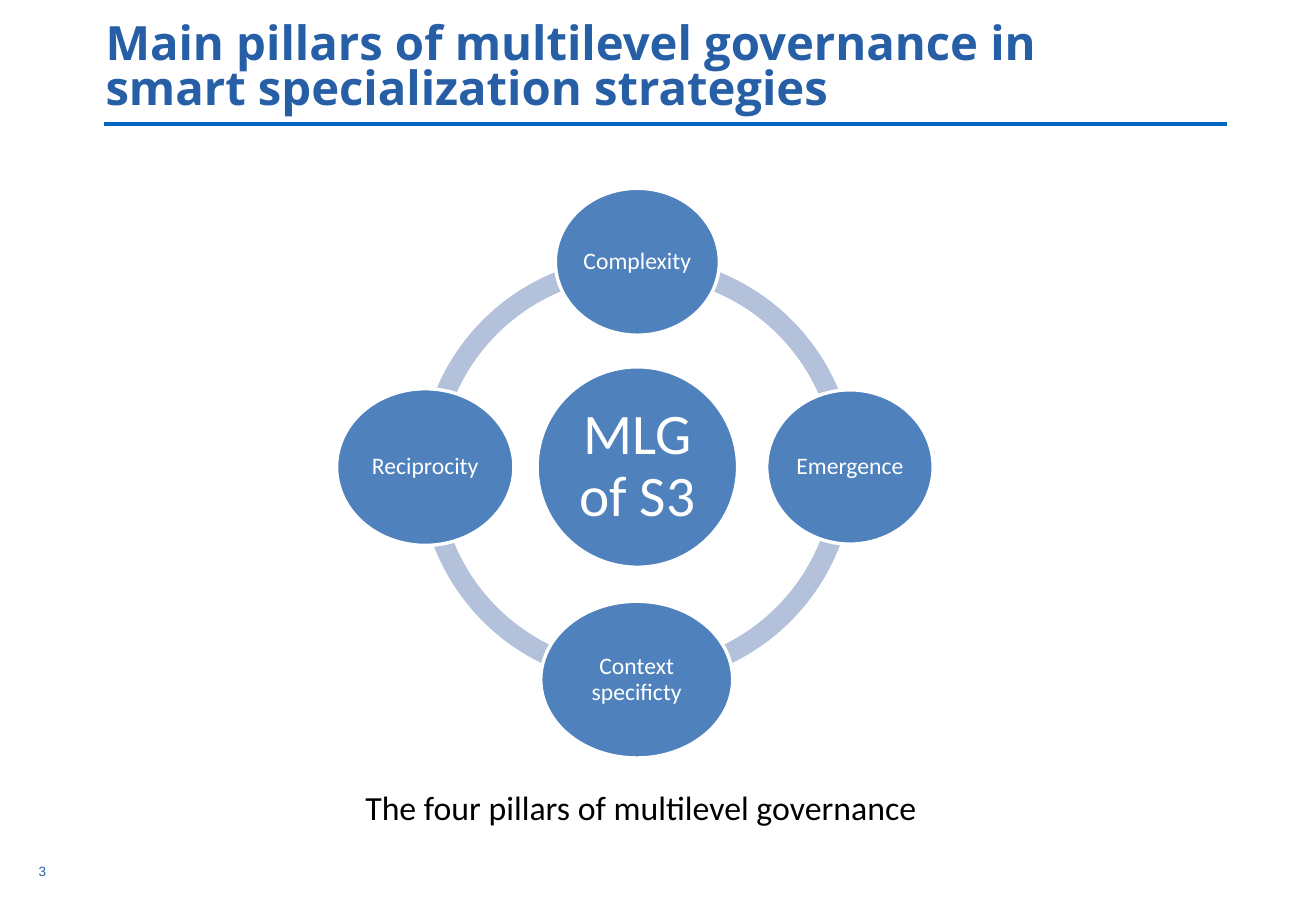
from dataclasses import dataclass

from lxml import etree
from pptx import Presentation
from pptx import util as u
from pptx.dml.color import RGBColor
from pptx.enum import shapes, text
from pptx.oxml.ns import qn

PX = 9144


@dataclass(frozen=True)
class Theme:
    title: str = "265FA6"
    rule: str = "0365C0"
    circle: str = "4F81BD"
    ring: str = "B3C1DB"
    light: str = "FFFFFF"
    dark: str = "000000"
    title_font: str = "Open Sans"
    body_font: str = "Calibri"
    number_font: str = "Arial"
    title_size: int = 28
    hub_size: int = 34
    pillar_size: int = 14
    caption_size: int = 20
    number_size: int = 8
    line_width: int = 2


THEME = Theme()

RING_SIZE = 358
RING_THICKNESS = 0.046
RING_QUARTERS = [(180, 345, 211), (90, 345, 206), (0, 345, 206), (270, 346, 211)]

HUB = ("MLG of S3", (442, 302, 165, 165))
PILLARS = [
    ("Complexity", (457, 155, 135, 121)),
    ("Emergence", (631, 321, 137, 127)),
    ("Context specificty", (445, 495, 158, 129)),
    ("Reciprocity", (277, 320, 146, 129)),
]


def px(*lengths):
    return [u.Emu(length * PX) for length in lengths]


def rgb(color):
    return RGBColor.from_string(color)


def write(shape, words, font, size, color, align=text.PP_ALIGN.LEFT, spacing=1.0, bold=False):
    para = shape.text_frame.paragraphs[0]
    para.text = words
    para.alignment = align
    para.line_spacing = spacing
    para.font.name = font
    para.font.size = u.Pt(size)
    para.font.bold = bold
    para.font.color.rgb = rgb(color)


def add_label(page, place, words, font, size, color, wrap=True, **style):
    box = page.shapes.add_textbox(*px(*place))
    box.text_frame.word_wrap = wrap
    write(box, words, font, size, color, **style)
    return box


def add_filled(page, kind, place, color):
    shape = page.shapes.add_shape(kind, *px(*place))
    shape.shadow.inherit = False
    shape.fill.solid()
    shape.fill.fore_color.rgb = rgb(color)
    return shape


def add_ring_quarter(page, start, left, top):
    place = (left, top, RING_SIZE, RING_SIZE)
    arc = add_filled(page, shapes.MSO_SHAPE.BLOCK_ARC, place, THEME.ring)
    arc.line.fill.background()
    arc.adjustments[0] = start * 0.6
    arc.adjustments[1] = (start + 90) % 360 * 0.6
    arc.adjustments[2] = RING_THICKNESS


def add_circle(page, words, place, size, inset):
    circle = add_filled(page, shapes.MSO_SHAPE.OVAL, place, THEME.circle)
    circle.line.color.rgb = rgb(THEME.light)
    circle.line.width = u.Pt(THEME.line_width)
    frame = circle.text_frame
    frame.word_wrap = True
    frame.vertical_anchor = text.MSO_ANCHOR.MIDDLE
    frame.margin_left, frame.margin_top, frame.margin_right, frame.margin_bottom = px(*[inset] * 4)
    write(circle, words, THEME.body_font, size, THEME.light,
          align=text.PP_ALIGN.CENTER, spacing=0.9)


def add_rule(page, left, right, top):
    rule = page.shapes.add_connector(shapes.MSO_CONNECTOR.STRAIGHT, *px(left, top, right, top))
    rule.line.color.rgb = rgb(THEME.rule)
    rule.line.width = u.Pt(THEME.line_width)
    etree.SubElement(rule._element.spPr, qn("a:effectLst"))


def main():
    deck = Presentation()
    deck.slide_width, deck.slide_height = px(1083, 750)
    page = deck.slides.add_slide(deck.slide_layouts[6])

    add_rule(page, 86, 1010, 102)
    add_label(page, (22, 706, 42, 24), "3", THEME.number_font, THEME.number_size,
              THEME.title, wrap=False)
    title = add_label(page, (77, 13, 812, 50),
                      "Main pillars of multilevel governance in smart specialization strategies",
                      THEME.title_font, THEME.title_size, THEME.title, spacing=0.8, bold=True)
    title.text_frame.margin_top = px(7)[0]

    for start, left, top in RING_QUARTERS:
        add_ring_quarter(page, start, left, top)
    add_circle(page, *HUB, THEME.hub_size, 5)
    for words, place in PILLARS:
        add_circle(page, words, place, THEME.pillar_size, 2)

    add_label(page, (184, 643, 687, 44), "The four pillars of multilevel governance",
              THEME.body_font, THEME.caption_size, THEME.dark, align=text.PP_ALIGN.CENTER)
    deck.save("out.pptx")


if __name__ == "__main__":
    main()
